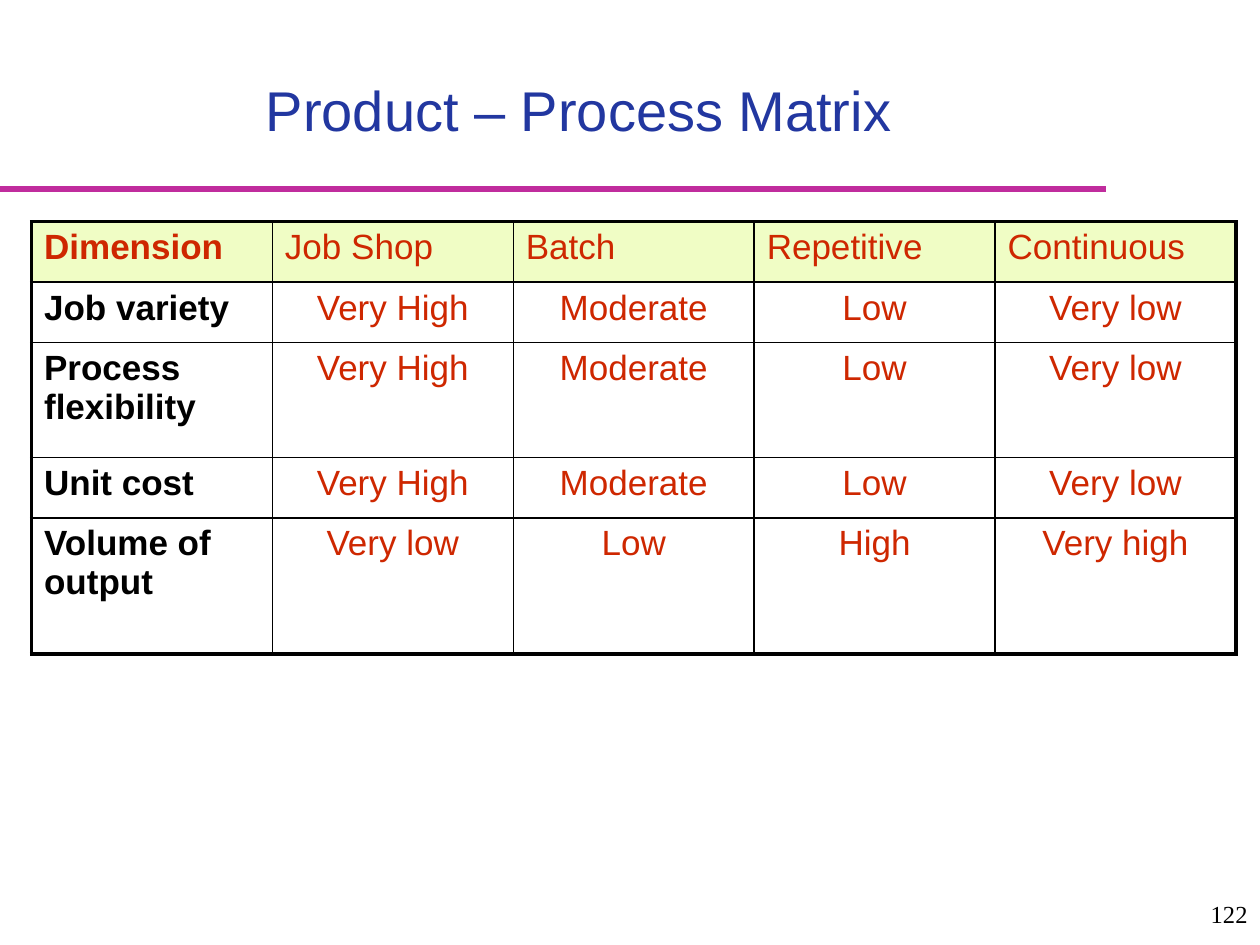
from dataclasses import dataclass

from lxml.etree import SubElement
from pptx import Presentation
from pptx.dml.color import RGBColor
from pptx.enum.shapes import MSO_CONNECTOR
from pptx.enum.text import MSO_ANCHOR, PP_ALIGN
from pptx.oxml import parse_xml
from pptx.oxml.ns import nsdecls, qn
from pptx.util import Inches, Pt


@dataclass(frozen=True)
class Theme:
    font: str = "Arial"
    number_font: str = "Times New Roman"
    title_size: int = 32
    table_size: int = 20
    number_size: int = 14
    title: str = "2237A0"
    rule: str = "C02C9D"
    accent: str = "CE2700"
    ink: str = "000000"
    header_fill: str = "F0FDC5"
    paper: str = "FFFFFF"
    rule_width: float = 4
    outer_border: float = 2.25
    inner_border: float = 1


THEME = Theme()
ROWS = [
    ["Dimension", "Job Shop", "Batch", "Repetitive", "Continuous"],
    ["Job variety", "Very High", "Moderate", "Low", "Very low"],
    ["Process flexibility", "Very High", "Moderate", "Low", "Very low"],
    ["Unit cost", "Very High", "Moderate", "Low", "Very low"],
    ["Volume of output", "Very low", "Low", "High", "Very high"],
]
ROW_HEIGHTS = [0.48, 0.48, 0.91, 0.48, 1.08]


def rgb(color):
    return RGBColor.from_string(color)


def style_text(p, size, color, font=THEME.font, bold=False, align=PP_ALIGN.LEFT):
    p.alignment = align
    p.font.name = font
    p.font.size = Pt(size)
    p.font.bold = bold
    p.font.color.rgb = rgb(color)


def add_title(s, text, box):
    tf = s.shapes.add_textbox(*map(Inches, box)).text_frame
    tf.word_wrap = True
    tf.vertical_anchor = MSO_ANCHOR.MIDDLE
    tf.text = text
    style_text(tf.paragraphs[0], THEME.title_size, THEME.title, align=PP_ALIGN.CENTER)


def add_rule(s, left, top, width):
    ends = map(Inches, (left, top, left + width, top))
    line = s.shapes.add_connector(MSO_CONNECTOR.STRAIGHT, *ends)
    line.line.color.rgb = rgb(THEME.rule)
    line.line.width = Pt(THEME.rule_width)
    SubElement(line._element.spPr, qn("a:effectLst"))


def set_borders(cell, widths):
    """Draw the left, right, top and bottom borders; they must precede the fill."""
    tcPr = cell._tc.get_or_add_tcPr()
    for i, (side, width) in enumerate(zip("LRTB", widths)):
        tcPr.insert(i, parse_xml(
            f'<a:ln{side} {nsdecls("a")} w="{Pt(width)}"><a:solidFill>'
            f'<a:srgbClr val="{THEME.ink}"/></a:solidFill></a:ln{side}>'))


def style_cell(cell, row, col):
    header, label = row == 0, col == 0
    if header:
        cell.fill.solid()
        cell.fill.fore_color.rgb = rgb(THEME.header_fill)
    else:
        cell.fill.background()
    style_text(
        cell.text_frame.paragraphs[0], THEME.table_size,
        THEME.ink if label and not header else THEME.accent, bold=label,
        align=PP_ALIGN.LEFT if header or label else PP_ALIGN.CENTER)
    on_edge = (label, col == len(ROWS[0]) - 1, header, row == len(ROWS) - 1)
    set_borders(cell, [THEME.outer_border if edge else THEME.inner_border
                       for edge in on_edge])


def add_matrix(s, left, top, width):
    box = map(Inches, (left, top, width, sum(ROW_HEIGHTS)))
    table = s.shapes.add_table(len(ROWS), len(ROWS[0]), *box).table
    table.first_row = table.horz_banding = False
    for column in table.columns:
        column.width = Inches(width / len(ROWS[0]))
    for i, (values, height) in enumerate(zip(ROWS, ROW_HEIGHTS)):
        table.rows[i].height = Inches(height)
        for j, value in enumerate(values):
            cell = table.cell(i, j)
            cell.text = value
            style_cell(cell, i, j)


def add_page_number(s, number, box):
    sp = s.shapes.add_textbox(*map(Inches, box))
    sp.line.color.rgb = rgb(THEME.paper)
    sp.line.width = Pt(0.75)
    tf = sp.text_frame
    tf.word_wrap = True
    tf.vertical_anchor = MSO_ANCHOR.MIDDLE
    tf.text = number
    style_text(tf.paragraphs[0], THEME.number_size, THEME.ink,
               font=THEME.number_font, align=PP_ALIGN.RIGHT)


def main():
    prs = Presentation()
    prs.slide_width, prs.slide_height = Inches(10), Inches(7.5)
    s = prs.slides.add_slide(prs.slide_layouts[6])
    add_rule(s, 0, 1.5, 8.78)
    add_page_number(s, "122", (7.67, 7, 2.33, 0.5))
    add_matrix(s, 0.25, 1.76, 9.56)
    add_title(s, "Product – Process Matrix", (0.35, 0.63, 8.49, 0.47))
    prs.save("out.pptx")


if __name__ == "__main__":
    main()
